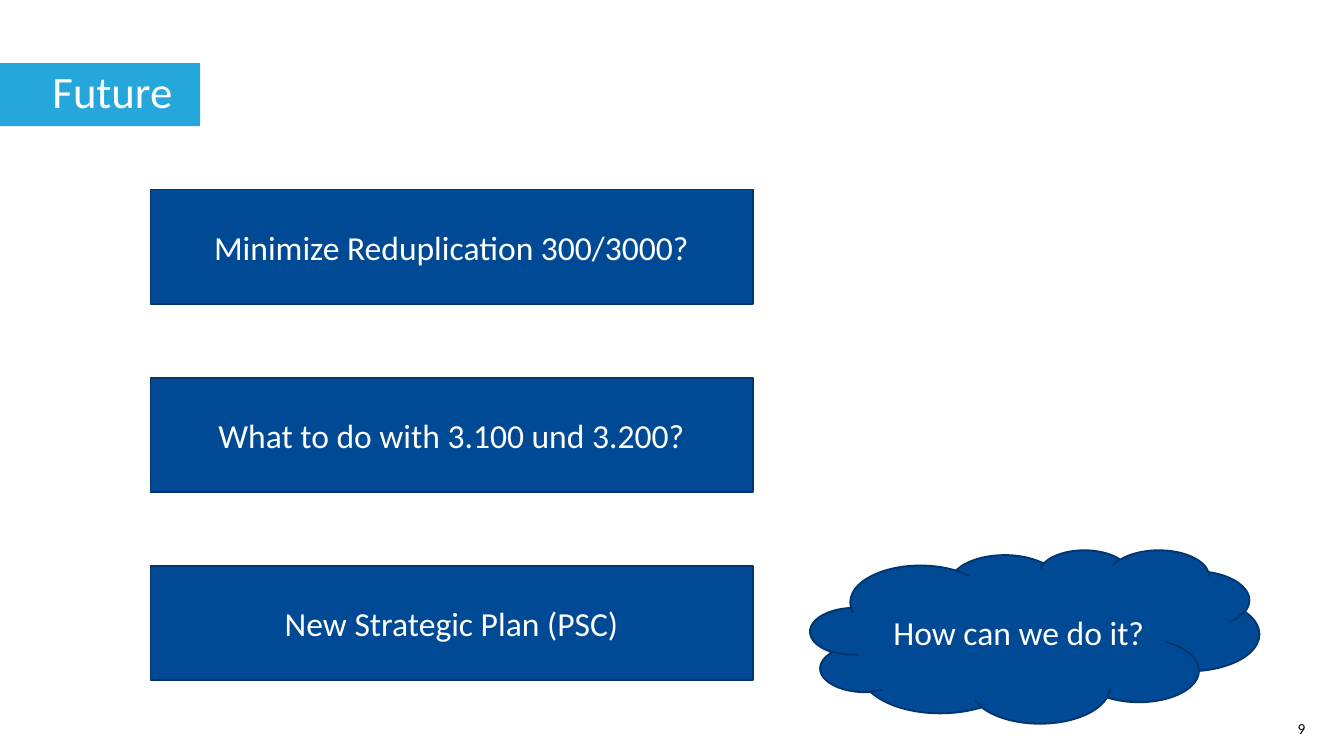
"""Build the "Future" slide: a title tag, three question boxes and a cloud."""
from dataclasses import dataclass, field
from typing import Any, Optional

from pptx import Presentation, util as u
from pptx.dml.color import RGBColor
from pptx.enum import shapes, text

WHITE = RGBColor(0xFF, 0xFF, 0xFF)
BLACK = RGBColor(0x00, 0x00, 0x00)
SKY = RGBColor(0x25, 0xA7, 0xDB)
BLUE = RGBColor(0x00, 0x49, 0x94)
NAVY = RGBColor(0x00, 0x36, 0x6D)

QUESTIONS = (
    "Minimize Reduplication 300/3000?",
    "What to do with 3.100 und 3.200?",
    "New Strategic Plan (PSC)",
)
FIRST_TOP, STEP = 1.41, 1.4
PAGE_WIDTH = u.Inches(10)
PAGE_HEIGHT = PAGE_WIDTH * 9 // 16


@dataclass(frozen=True)
class Label:
    words: str
    left: float
    top: float
    width: float
    height: float
    size: float = 18
    kind: shapes.MSO_SHAPE = shapes.MSO_SHAPE.RECTANGLE
    fill: Optional[RGBColor] = BLUE
    line: Optional[RGBColor] = NAVY
    color: RGBColor = WHITE
    align: text.PP_ALIGN = text.PP_ALIGN.CENTER
    frame: dict[str, Any] = field(default_factory=dict)
    line_spacing: float = 1.0


def set_all(target: Any, values: dict[str, Any]) -> None:
    for name, value in values.items():
        setattr(target, name, value)


def draw_label(page: Any, label: Label) -> None:
    area = [u.Inches(n) for n in (label.left, label.top, label.width, label.height)]
    if label.fill is None:
        box = page.shapes.add_textbox(*area)
    else:
        box = page.shapes.add_shape(label.kind, *area)
        box.shadow.inherit = False
        box.fill.solid()
        box.fill.fore_color.rgb = label.fill
        if label.line is None:
            box.line.fill.background()
        else:
            box.line.color.rgb = label.line
            box.line.width = u.Pt(1)
    frame = box.text_frame
    anchor = text.MSO_ANCHOR.MIDDLE
    set_all(frame, {"word_wrap": True, "vertical_anchor": anchor, **label.frame})
    para = frame.paragraphs[0]
    set_all(para, {"alignment": label.align, "line_spacing": label.line_spacing})
    span = para.add_run()
    span.text = label.words
    set_all(span.font, {"name": "Calibri", "size": u.Pt(label.size)})
    span.font.color.rgb = label.color


def main() -> None:
    deck = Presentation()
    set_all(deck, {"slide_width": PAGE_WIDTH, "slide_height": PAGE_HEIGHT})
    page = deck.slides.add_slide(deck.slide_layouts[6])
    top = text.MSO_ANCHOR.TOP
    title_frame = {
        "margin_left": u.Inches(0.39),
        "margin_right": u.Inches(0.2),
        "word_wrap": False,
        "vertical_anchor": top,
    }
    labels = [
        Label("9", 8.93, 5.3, 0.88, 0.24, size=8.2, fill=None, color=BLACK,
              align=text.PP_ALIGN.RIGHT, frame={"vertical_anchor": top}),
        Label("Future", 0, 0.47, 1.49, 0.47, size=24, fill=SKY, line=None,
              align=text.PP_ALIGN.LEFT, frame=title_frame, line_spacing=0.9),
        *(Label(words, 1.12, FIRST_TOP + row * STEP, 4.48, 0.85)
          for row, words in enumerate(QUESTIONS)),
        Label("How can we do it?", 6.03, 4.09, 3.34, 1.29, kind=shapes.MSO_SHAPE.CLOUD),
    ]
    for label in labels:
        draw_label(page, label)
    deck.save("out.pptx")


if __name__ == "__main__":
    main()
